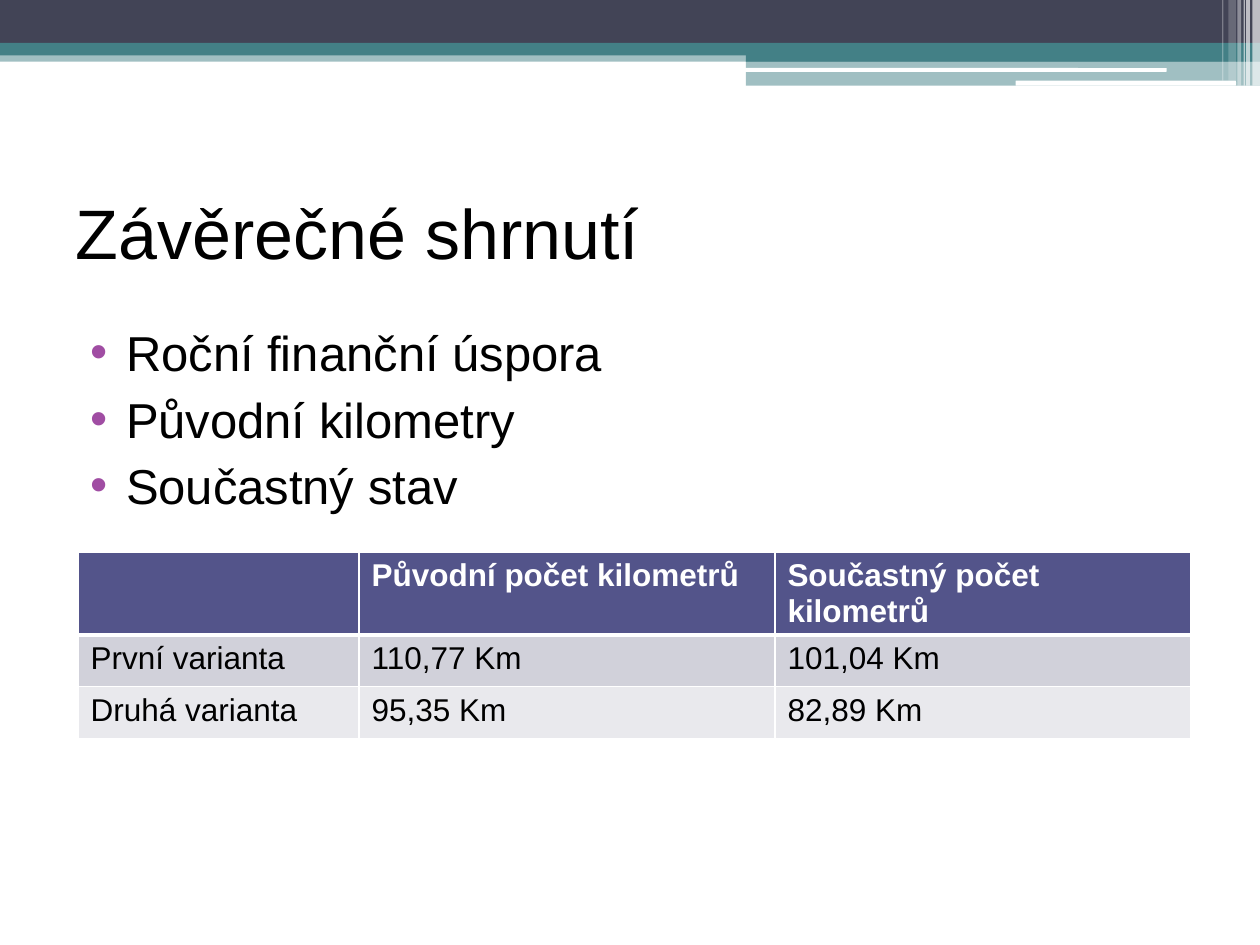
from dataclasses import dataclass

from pptx import Presentation
from pptx.dml.color import RGBColor
from pptx.enum.shapes import MSO_SHAPE
from pptx.enum.text import MSO_ANCHOR, MSO_AUTO_SIZE, PP_ALIGN
from pptx.oxml import parse_xml
from pptx.oxml.ns import nsdecls
from pptx.util import Inches, Pt

RECT = MSO_SHAPE.RECTANGLE
ROUND = MSO_SHAPE.ROUNDED_RECTANGLE
MIDDLE = MSO_ANCHOR.MIDDLE
TOP = MSO_ANCHOR.TOP
LEFT = PP_ALIGN.LEFT
NO_FIT = MSO_AUTO_SIZE.NONE


@dataclass(frozen=True)
class Theme:
    font: str = "Arial"
    ink: str = "000000"
    white: str = "FFFFFF"
    dark: str = "424456"
    teal: str = "438086"
    bullet: str = "A04DA3"
    head: str = "53548A"
    bands: tuple = ("D1D1DA", "E9E9ED")
    title: int = 40
    body: int = 28
    cell: int = 18


THEME = Theme()

BARS = [
    (RECT, 0, 0.4, 10, 0.09, THEME.teal, 50),
    (RECT, 0, 0, 10, 0.34, THEME.dark, 100),
    (RECT, 0, 0.34, 10, 0.1, THEME.teal, 100),
    (RECT, 5.92, 0.39, 4.08, 0.1, THEME.teal, 100),
    (RECT, 5.92, 0.48, 4.08, 0.2, THEME.teal, 50),
    (ROUND, 5.91, 0.54, 3.35, 0.03, THEME.white, 100),
    (ROUND, 8.06, 0.64, 1.75, 0.04, THEME.white, 100),
]
STRIPES = [
    (9.94, 0.06, 0.68, 65),
    (9.89, 0.03, 0.68, 65),
    (9.87, 0.01, 0.68, 60),
    (9.82, 0.03, 0.68, 40),
    (9.75, 0.06, 0.64, 20),
    (9.7, 0.01, 0.64, 30),
]
POINTS = ["Roční finanční úspora", "Původní kilometry", "Součastný stav"]
ROWS = [
    ["", "Původní počet kilometrů", "Součastný počet kilometrů"],
    ["První varianta", "110,77 Km", "101,04 Km"],
    ["Druhá varianta", "95,35 Km", "82,89 Km"],
]
WIDTHS = [2.23, 3.3, 3.3]
HEIGHTS = [0.65, 0.41, 0.41]


def color(code):
    return RGBColor.from_string(code)


def style(para, size, code, bold=False):
    font = para.font
    font.name = THEME.font
    font.size = Pt(size)
    font.bold = bold
    font.color.rgb = color(code)


def add_bar(slide, kind, left, top, width, height, code, alpha):
    bar = slide.shapes.add_shape(
        kind, Inches(left), Inches(top), Inches(width), Inches(height))
    bar.shadow.inherit = False
    bar.line.fill.background()
    bar.fill.solid()
    bar.fill.fore_color.rgb = color(code)
    if alpha < 100:
        tone = bar.fill._xPr.solidFill[0]
        tone.append(parse_xml(
            f'<a:alpha {nsdecls("a")} val="{alpha * 1000}"/>'))


def place(shape, left, top, width, height, anchor):
    shape.left, shape.top = Inches(left), Inches(top)
    shape.width, shape.height = Inches(width), Inches(height)
    frame = shape.text_frame
    frame.auto_size = NO_FIT
    frame.word_wrap = True
    frame.vertical_anchor = anchor
    return frame


def set_title(shape, text):
    frame = place(shape, 0.5, 1.25, 9, 1.17, MIDDLE)
    frame.text = text
    para = frame.paragraphs[0]
    para.alignment = LEFT
    style(para, THEME.title, THEME.ink)


def add_bullet(para):
    props = para._p.get_or_add_pPr()
    props.set("marL", str(Inches(0.4)))
    props.set("indent", str(Inches(-0.28)))
    for part in (
        f'<a:buClr {nsdecls("a")}><a:srgbClr val="{THEME.bullet}"/></a:buClr>',
        f'<a:buFont {nsdecls("a")} typeface="{THEME.font}"/>',
        f'<a:buChar {nsdecls("a")} char="•"/>',
    ):
        props.append(parse_xml(part))


def set_list(shape, items):
    frame = place(shape, 0.5, 2.46, 9, 4.73, TOP)
    frame.margin_top = Inches(0.1)
    frame.text = "\n".join(items)
    for i, para in enumerate(frame.paragraphs):
        add_bullet(para)
        para.space_before = Pt(4.4 if i else 0)
        style(para, THEME.body, THEME.ink)


def set_edges(cell, base):
    props = cell._tc.get_or_add_tcPr()
    for i, (side, width) in enumerate(zip("LRTB", (1, 1, 1, base))):
        props.insert(i, parse_xml(
            f'<a:ln{side} {nsdecls("a")} w="{Pt(width)}"><a:solidFill>'
            f'<a:srgbClr val="{THEME.white}"/></a:solidFill></a:ln{side}>'))


def add_grid(slide, rows):
    table = slide.shapes.add_table(
        len(rows), len(WIDTHS), Inches(0.62), Inches(4.38),
        Inches(sum(WIDTHS)), Inches(sum(HEIGHTS))).table
    for col, width in zip(table.columns, WIDTHS):
        col.width = Inches(width)
    fills = (THEME.head, *THEME.bands)
    for r, (row, texts) in enumerate(zip(table.rows, rows)):
        row.height = Inches(HEIGHTS[r])
        head = r == 0
        for cell, text in zip(row.cells, texts):
            cell.text = text
            cell.fill.solid()
            cell.fill.fore_color.rgb = color(fills[r])
            set_edges(cell, 3 if head else 1)
            style(cell.text_frame.paragraphs[0], THEME.cell,
                  THEME.white if head else THEME.ink, head)


def main():
    deck = Presentation()
    deck.slide_width, deck.slide_height = Inches(10), Inches(7.5)
    slide = deck.slides.add_slide(deck.slide_layouts[1])
    title, body = slide.placeholders
    for bar in BARS:
        add_bar(slide, *bar)
    for left, width, height, alpha in STRIPES:
        add_bar(slide, RECT, left, 0, width, height, THEME.white, alpha)
    for shape in (title, body):
        slide.shapes._spTree.append(shape._element)
    set_title(title, "Závěrečné shrnutí")
    set_list(body, POINTS)
    add_grid(slide, ROWS)
    deck.save("out.pptx")


if __name__ == "__main__":
    main()
